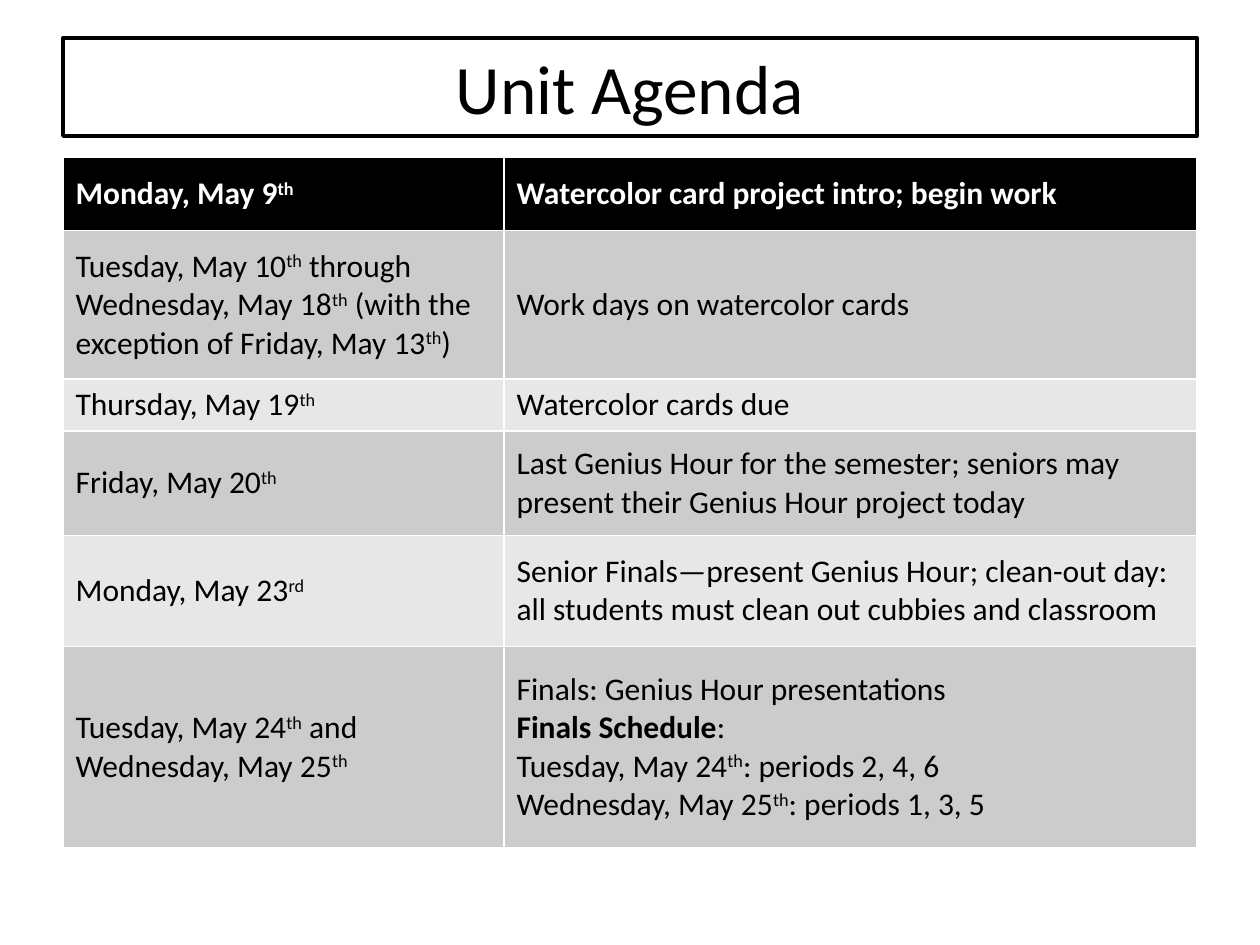
"""Builds the Unit Agenda slide: a framed title above a two-column schedule table."""
from pptx import Presentation
from pptx.dml.color import RGBColor
from pptx.enum.shapes import MSO_SHAPE
from pptx.enum.text import MSO_ANCHOR, PP_ALIGN
from pptx.util import Inches, Pt

RECTANGLE = MSO_SHAPE.RECTANGLE
MIDDLE = MSO_ANCHOR.MIDDLE
CENTER = PP_ALIGN.CENTER
FONT = "Calibri"
COLORS = {"black": "000000", "white": "FFFFFF", "dark band": "CCCCCC", "light band": "E7E7E7"}
SUPERSCRIPT, BOLD = "^", "*"

AGENDA = [
    (0.58, "Monday, May 9^th^", "Watercolor card project intro; begin work"),
    (1.18, "Tuesday, May 10^th^ through Wednesday, May 18^th^ "
           "(with the exception of Friday, May 13^th^)",
     "Work days on watercolor cards"),
    (0.41, "Thursday, May 19^th^", "Watercolor cards due"),
    (0.83, "Friday, May 20^th^",
     "Last Genius Hour for the semester; seniors may present their Genius Hour project today"),
    (0.88, "Monday, May 23^rd^",
     "Senior Finals—present Genius Hour; clean-out day: "
     "all students must clean out cubbies and classroom"),
    (1.6, "Tuesday, May 24^th^ and Wednesday, May 25^th^",
     "Finals: Genius Hour presentations\n*Finals Schedule*:\n"
     "Tuesday, May 24^th^: periods 2, 4, 6\nWednesday, May 25^th^: periods 1, 3, 5"),
]


def color(name):
    return RGBColor.from_string(COLORS[name])


def write_marked(paragraph, marked, ink, bold):
    mark = BOLD if BOLD in marked else SUPERSCRIPT
    for position, piece in enumerate(marked.split(mark)):
        if not piece:
            continue
        is_marked = position % 2 == 1
        run = paragraph.add_run()
        run.text = piece
        run.font.name = FONT
        run.font.size = Pt(18)
        run.font.bold = bold or (is_marked and mark == BOLD)
        run.font.color.rgb = color(ink)
        if is_marked and mark == SUPERSCRIPT:
            run.font._element.set("baseline", "30000")


prs = Presentation()
prs.slide_width, prs.slide_height = Inches(10), Inches(7.5)
slide = prs.slides.add_slide(prs.slide_layouts[6])

title = slide.shapes.add_shape(RECTANGLE, Inches(0.5), Inches(0.3), Inches(9), Inches(0.78))
title.shadow.inherit = False
title.fill.solid()
title.fill.fore_color.rgb = color("white")
title.line.color.rgb = color("black")
title.line.width = Pt(2)
title.text_frame.text = "Unit Agenda"
title.text_frame.vertical_anchor = MIDDLE
heading = title.text_frame.paragraphs[0]
heading.alignment = CENTER
heading.font.name = FONT
heading.font.size = Pt(39.6)
heading.font.color.rgb = color("black")

total_height = sum(height for height, *_ in AGENDA)
schedule = slide.shapes.add_table(
    len(AGENDA), 2, Inches(0.5), Inches(1.25), Inches(9), Inches(total_height)).table
schedule.columns[0].width = Inches(3.5)
schedule.columns[1].width = Inches(5.5)

for row, (height, *entries) in enumerate(AGENDA):
    schedule.rows[row].height = Inches(height)
    is_header = row == 0
    band = "black" if is_header else "dark band" if row % 2 else "light band"
    for column, entry in enumerate(entries):
        cell = schedule.cell(row, column)
        cell.vertical_anchor = MIDDLE
        cell.fill.solid()
        cell.fill.fore_color.rgb = color(band)
        for number, line in enumerate(entry.split("\n")):
            frame = cell.text_frame
            paragraph = frame.add_paragraph() if number else frame.paragraphs[0]
            write_marked(paragraph, line, "white" if is_header else "black", is_header)

prs.save("out.pptx")
